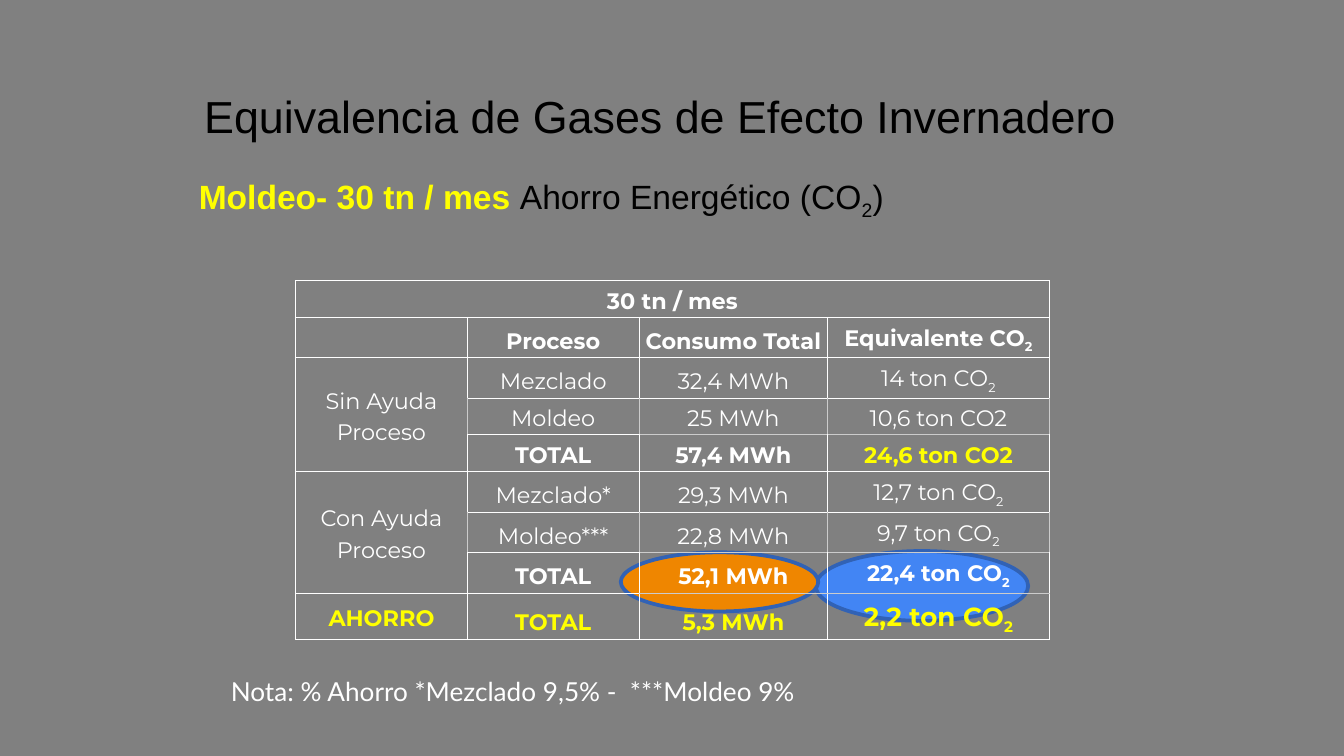
"""Build the greenhouse gas equivalence slide."""
from dataclasses import dataclass

from lxml import etree
from pptx import Presentation
from pptx.dml.color import RGBColor
from pptx.enum import shapes, text
from pptx.oxml import ns
from pptx.util import Pt

GRAY = RGBColor(0x80, 0x80, 0x80)
BLACK = RGBColor(0, 0, 0)
WHITE = RGBColor(0xFF, 0xFF, 0xFF)
SILVER = RGBColor(0xCC, 0xCC, 0xCC)
YELLOW = RGBColor(0xFF, 0xFF, 0)
BLUE = RGBColor(0x42, 0x85, 0xF4)
ORANGE = RGBColor(0xEF, 0x86, 0)
NAVY = RGBColor(0x31, 0x62, 0xB5)


@dataclass(frozen=True)
class Run:
    content: str
    size: float
    font: str
    color: RGBColor
    bold: bool = False


@dataclass(frozen=True)
class Box:
    left: float
    top: float
    width: float
    height: float

    def lengths(self) -> tuple:
        return Pt(self.left), Pt(self.top), Pt(self.width), Pt(self.height)


@dataclass(frozen=True)
class Highlight:
    box: Box
    color: RGBColor


HIGHLIGHTS = (
    Highlight(Box(437, 295.2, 113.8, 37.4), BLUE),
    Highlight(Box(332.6, 295.9, 105.8, 31.7), ORANGE),
)
TABLE_BOX = Box(158.4, 150.3, 403.9, 167.8)
COLUMN_WIDTHS = (92, 92, 101.1, 118.6)
ROW_HEIGHT = 13.7
ROWS = (
    ("30 tn / mes", "", "", ""),
    ("", "Proceso", "Consumo Total", "Equivalente CO_2"),
    ("Sin Ayuda Proceso", "Mezclado", "32,4 MWh", "14 ton CO_2"),
    ("", "Moldeo", "25 MWh", "10,6 ton CO2"),
    ("", "TOTAL", "57,4 MWh", "24,6 ton CO2"),
    ("Con Ayuda Proceso", "Mezclado*", "29,3 MWh", "12,7 ton CO_2"),
    ("", "Moldeo***", "22,8 MWh", "9,7 ton CO_2"),
    ("", "TOTAL", "52,1 MWh", "22,4 ton CO_2"),
    ("AHORRO", "TOTAL", "5,3 MWh", "2,2 ton CO_2"),
)
MERGES = (((0, 0), (0, 3)), ((2, 0), (4, 0)), ((5, 0), (7, 0)))
BOLD_ROWS = {0, 1, 4, 7, 8}
SOFT_SIDE_ROWS = {3, 6}
SOFT_BOTTOM_ROWS = {3, 6, 7}
SAVINGS_ROW = 8


def add_run(paragraph, run: Run) -> None:
    """Add a run, lowering what follows an underscore."""
    for index, part in enumerate(run.content.split("_")):
        piece = paragraph.add_run()
        piece.text = part
        piece.font.size = Pt(run.size)
        piece.font.name = run.font
        piece.font.bold = run.bold
        piece.font.color.rgb = run.color
        if index:
            piece.font._element.set("baseline", "-25000")


def set_insets(frame, inset: float) -> None:
    """Give a text frame equal insets."""
    frame.margin_left = frame.margin_right = Pt(inset)
    frame.margin_top = frame.margin_bottom = Pt(inset)


def add_text(slide, box: Box, runs: tuple):
    """Add a wrapped text box and return its frame."""
    frame = slide.shapes.add_textbox(*box.lengths()).text_frame
    frame.word_wrap = True
    frame.auto_size = text.MSO_AUTO_SIZE.SHAPE_TO_FIT_TEXT
    for run in runs:
        add_run(frame.paragraphs[0], run)
    return frame


def space_paragraph(frame) -> None:
    """Apply the spacing shared by the title and the note."""
    set_insets(frame, 7.2)
    frame.paragraphs[0].line_spacing = 1.15
    frame.paragraphs[0].space_before = Pt(0)
    frame.paragraphs[0].space_after = Pt(16)


def add_title(slide, box: Box, run: Run) -> None:
    """Fill the title placeholder."""
    title = slide.shapes.title
    title.left, title.top, title.width, title.height = box.lengths()
    frame = title.text_frame
    frame.word_wrap = True
    frame.auto_size = text.MSO_AUTO_SIZE.NONE
    frame.vertical_anchor = text.MSO_ANCHOR.TOP
    space_paragraph(frame)
    frame.paragraphs[0].alignment = text.PP_ALIGN.LEFT
    add_run(frame.paragraphs[0], run)


def add_highlight(slide, highlight: Highlight) -> None:
    """Add an ellipse behind a total."""
    shape = slide.shapes.add_shape(shapes.MSO_SHAPE.OVAL, *highlight.box.lengths())
    shape.shadow.inherit = False
    shape.fill.solid()
    shape.fill.fore_color.rgb = highlight.color
    shape.line.color.rgb = NAVY
    shape.line.width = Pt(2)


def set_borders(cell, row: int, column: int) -> None:
    """Draw the four borders of a cell."""
    soft_side = row in SOFT_SIDE_ROWS and column >= 1
    soft = {
        "L": soft_side,
        "R": soft_side,
        "T": row - 1 in SOFT_BOTTOM_ROWS and column >= 2,
        "B": row in SOFT_BOTTOM_ROWS and column >= 2,
    }
    properties = cell._tc.get_or_add_tcPr()
    for index, (side, is_soft) in enumerate(soft.items()):
        line = etree.Element(ns.qn(f"a:ln{side}"), w=str(Pt(0.6)))
        fill = etree.SubElement(line, ns.qn("a:solidFill"))
        etree.SubElement(fill, ns.qn("a:srgbClr"), val=str(SILVER if is_soft else WHITE))
        properties.insert(index, line)


def fill_cell(cell, row: int, column: int, content: str) -> None:
    """Format a cell and write its content."""
    cell.fill.background()
    cell.margin_left = cell.margin_right = Pt(2.16)
    cell.margin_top = cell.margin_bottom = Pt(1.44)
    cell.vertical_anchor = text.MSO_ANCHOR.BOTTOM if column else text.MSO_ANCHOR.MIDDLE
    if row == 0:
        cell.vertical_anchor = text.MSO_ANCHOR.BOTTOM
    set_borders(cell, row, column)
    paragraph = cell.text_frame.paragraphs[0]
    paragraph.alignment = text.PP_ALIGN.CENTER
    paragraph.line_spacing = 1.15
    if content:
        color = YELLOW if row == SAVINGS_ROW or (row, column) == (4, 3) else WHITE
        size = 14 if (row, column) == (SAVINGS_ROW, 3) else 12
        add_run(paragraph, Run(content, size, "Montserrat", color, row in BOLD_ROWS))
    else:
        etree.SubElement(paragraph._p, ns.qn("a:endParaRPr"), sz="1200")


def add_consumption_table(slide) -> None:
    """Add the table of consumption and emissions."""
    table = slide.shapes.add_table(
        len(ROWS), len(COLUMN_WIDTHS), *TABLE_BOX.lengths()
    ).table
    table.first_row = table.horz_banding = False
    for column, width in zip(table.columns, COLUMN_WIDTHS):
        column.width = Pt(width)
    for row, contents in enumerate(ROWS):
        table.rows[row].height = Pt(ROW_HEIGHT)
        for column, content in enumerate(contents):
            fill_cell(table.cell(row, column), row, column, content)
    for first, last in MERGES:
        table.cell(*first).merge(table.cell(*last))


def main() -> None:
    """Create and save the presentation."""
    presentation = Presentation()
    presentation.slide_width, presentation.slide_height = Pt(720), Pt(405)
    slide = presentation.slides.add_slide(presentation.slide_layouts[5])
    slide.background.fill.solid()
    slide.background.fill.fore_color.rgb = GRAY
    for highlight in HIGHLIGHTS:
        add_highlight(slide, highlight)
    add_consumption_table(slide)
    add_title(slide, Box(102.2, 36, 673.9, 40.3),
              Run("Equivalencia de Gases de Efecto Invernadero", 24, "Arial", BLACK))
    note = Run("Nota: % Ahorro *Mezclado 9,5% -  ***Moldeo 9%", 14, "Lato", WHITE)
    space_paragraph(add_text(slide, Box(116.6, 352.1, 537.1, 31.7), (note,)))
    add_text(slide, Box(99.4, 90.7, 388.1, 28.8), (
        Run("Moldeo- 30 tn / mes ", 18, "Arial", YELLOW, True),
        Run("Ahorro Energético (CO", 18, "Arial", BLACK),
        Run("_2", 18, "Arial", BLACK),
        Run(")", 18, "Arial", BLACK),
    ))


    presentation.save("out.pptx")


if __name__ == "__main__":
    main()
